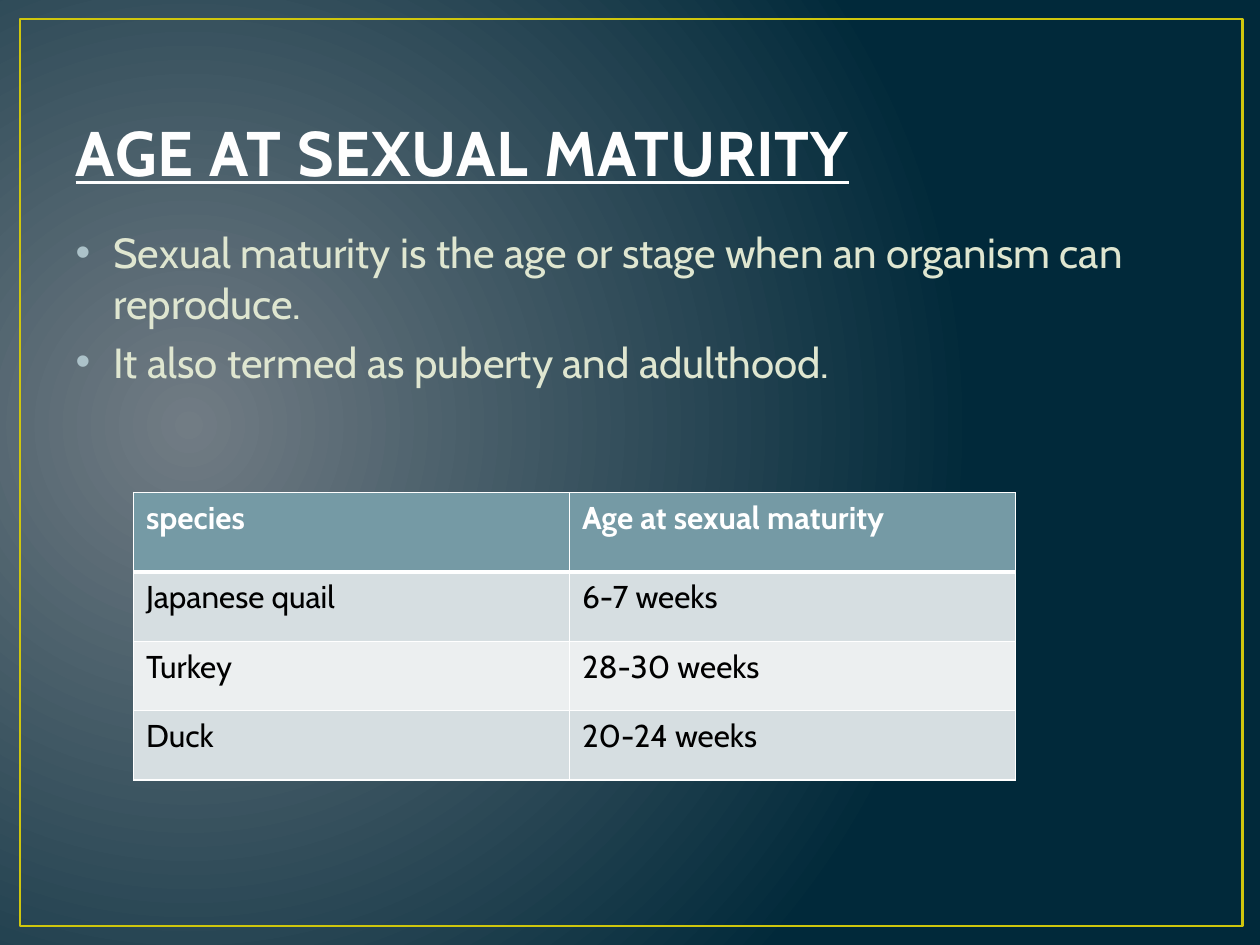
from pptx import Presentation
from pptx.dml.color import RGBColor
from pptx.enum.shapes import MSO_SHAPE
from pptx.enum.text import MSO_ANCHOR, PP_ALIGN
from pptx.oxml import parse_xml
from pptx.oxml.ns import nsdecls, qn
from pptx.util import Inches, Pt

RECTANGLE = MSO_SHAPE.RECTANGLE
BOTTOM, TOP = MSO_ANCHOR.BOTTOM, MSO_ANCHOR.TOP
LEFT = PP_ALIGN.LEFT
FONT = "Cabin"
COLORS = {
    "glow": "717C84", "night": "01293A", "frame": "CFC60D",
    "title": "FEFEFE", "body": "DFE6D0", "bullet": "ACC2C9",
    "header": "759AA5", "odd": "D6DEE1", "even": "ECEFF0",
    "white": "FFFFFF", "black": "000000",
}
POINTS = [
    "Sexual maturity is the age or stage when an organism can reproduce.",
    "It also termed as puberty and adulthood.",
]
ROWS = [
    ("species", "Age at sexual maturity"),
    ("Japanese quail", "6-7 weeks"),
    ("Turkey", "28-30 weeks"),
    ("Duck", "20-24 weeks"),
]
COLUMN_WIDTHS = [3.46, 3.54]
ROW_HEIGHTS = [0.63, 0.55, 0.55, 0.55]


def rgb(name):
    """Return the palette colour with this name."""
    return RGBColor.from_string(COLORS[name])


def place(shape, left, top, width, height):
    """Move and size a shape, in inches."""
    shape.left, shape.top = Inches(left), Inches(top)
    shape.width, shape.height = Inches(width), Inches(height)


def format_para(para, size, color, bold=False):
    """Format every run of a left-aligned paragraph."""
    para.alignment = LEFT
    for span in para.runs:
        span.font.name = FONT
        span.font.size = Pt(size)
        span.font.bold = bold
        span.font.color.rgb = rgb(color)


def paint_background(page):
    """Fill the page with a radial gradient."""
    fill = page.background.fill
    fill.gradient()
    for stop, color in zip(fill.gradient_stops, ("glow", "night")):
        stop.color.rgb = rgb(color)
    gradient = page.element.find(".//" + qn("a:gradFill"))
    linear = gradient.find(qn("a:lin"))
    gradient.replace(linear, parse_xml(
        f'<a:path {nsdecls("a")} path="circle">'
        '<a:fillToRect l="15000" t="50000" r="85000" b="60000"/></a:path>'))


def add_frame(page):
    """Draw the thin frame around the page."""
    frame = page.shapes.add_shape(
        RECTANGLE, Inches(0.16), Inches(0.15), Inches(9.7), Inches(7.2))
    frame.shadow.inherit = False
    frame.fill.background()
    frame.line.color.rgb = rgb("frame")
    frame.line.width = Pt(1.5)


def fill_title(box, text):
    """Write the underlined title."""
    place(box, 0.5, 0.3, 9, 1.25)
    box.text_frame.text = text
    box.text_frame.vertical_anchor = BOTTOM
    para = box.text_frame.paragraphs[0]
    format_para(para, 36, "title", bold=True)
    for span in para.runs:
        span.font.underline = True
        span.font._element.set("spc", "50")


def fill_body(box, points):
    """Write the bulleted list."""
    place(box, 0.5, 1.75, 9, 4.95)
    box.text_frame.text = "\n".join(points)
    box.text_frame.vertical_anchor = TOP
    for para in box.text_frame.paragraphs:
        format_para(para, 24, "body")
        properties = para._p.get_or_add_pPr()
        properties.set("marL", str(Inches(0.3)))
        properties.set("indent", str(Inches(-0.3)))
        for xml in (
            f'<a:buClr {nsdecls("a")}><a:srgbClr val="{COLORS["bullet"]}"/></a:buClr>',
            f'<a:buFont {nsdecls("a")} typeface="Arial"/>',
            f'<a:buChar {nsdecls("a")} char="•"/>',
        ):
            properties.append(parse_xml(xml))


def set_borders(cell, top, bottom):
    """Give a cell white borders, with top and bottom widths in points."""
    properties = cell._tc.get_or_add_tcPr()
    for side, width in (("L", 1), ("R", 1), ("T", top), ("B", bottom)):
        properties.append(parse_xml(
            f'<a:ln{side} {nsdecls("a")} w="{Pt(width)}"><a:solidFill>'
            f'<a:srgbClr val="{COLORS["white"]}"/></a:solidFill></a:ln{side}>'))


def add_species_table(page):
    """Add the table of ages by species."""
    table = page.shapes.add_table(
        len(ROWS), len(COLUMN_WIDTHS), Inches(1.06), Inches(3.91),
        Inches(sum(COLUMN_WIDTHS)), Inches(sum(ROW_HEIGHTS))).table
    for column, width in zip(table.columns, COLUMN_WIDTHS):
        column.width = Inches(width)
    for index, (row, height) in enumerate(zip(table.rows, ROW_HEIGHTS)):
        row.height = Inches(height)
        is_header = index == 0
        band = "header" if is_header else ("odd" if index % 2 else "even")
        for cell, text in zip(row.cells, ROWS[index]):
            cell.text_frame.text = text
            format_para(cell.text_frame.paragraphs[0], 18,
                        "white" if is_header else "black", bold=is_header)
            set_borders(cell, 3 if index == 1 else 1, 3 if is_header else 1)
            cell.fill.solid()
            cell.fill.fore_color.rgb = rgb(band)


def main():
    """Build and save the slide."""
    deck = Presentation()
    deck.slide_width, deck.slide_height = Inches(10), Inches(7.5)
    page = deck.slides.add_slide(deck.slide_layouts[1])
    paint_background(page)
    add_frame(page)
    fill_title(page.shapes.title, "AGE AT SEXUAL MATURITY")
    fill_body(page.placeholders[1], POINTS)
    add_species_table(page)
    deck.save("out.pptx")


if __name__ == "__main__":
    main()
